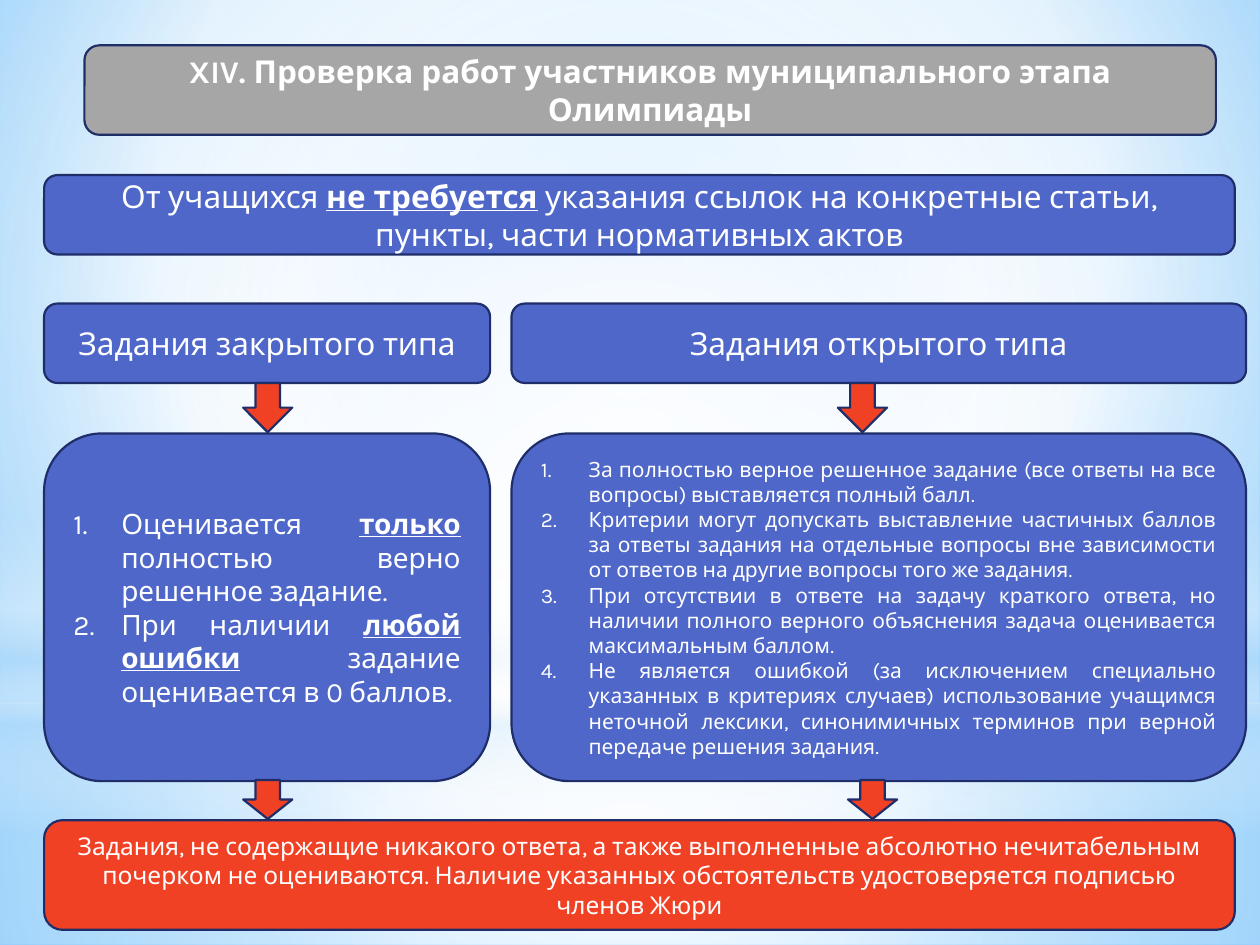
from lxml import etree
from pptx import Presentation
from pptx import util as u
from pptx.dml.color import RGBColor
from pptx.enum import shapes, text
from pptx.oxml import ns

BLUE, RED, GREY, NAVY, WHITE = "4E67C8", "F14124", "A6A6A6", "1F2E69", "FFFFFF"
SKY = "B4DCFA"
KIND = shapes.MSO_SHAPE
ALIGN = text.PP_ALIGN


def paint(fill, colour):
    fill.solid()
    fill.fore_color.rgb = RGBColor.from_string(colour)


def write(box, lines, size, bold=False, numbered=False):
    """Fill a box with lines; words between asterisks are bold and underlined."""
    frame = box.text_frame
    frame.word_wrap = True
    frame.vertical_anchor = text.MSO_ANCHOR.MIDDLE
    for index, line in enumerate(lines):
        para = frame.add_paragraph() if index else frame.paragraphs[0]
        para.alignment = ALIGN.JUSTIFY if numbered else ALIGN.CENTER
        if numbered:
            props = para._p.get_or_add_pPr()
            props.set("marL", str(u.Inches(0.38)))
            props.set("indent", str(-u.Inches(0.38)))
            etree.SubElement(props, ns.qn("a:buAutoNum"), type="arabicPeriod")
        for part, words in enumerate(line.split("*")):
            span = para.add_run()
            span.text = words
            span.font.name = "Karla"
            span.font.size = u.Pt(size)
            span.font.bold = bold or part % 2 == 1
            span.font.underline = part % 2 == 1
            paint(span.font.fill, WHITE)


deck = Presentation()
deck.slide_width, deck.slide_height = u.Inches(10), u.Inches(7.5)
page = deck.slides.add_slide(deck.slide_layouts[6])

# Backdrop: page gradient, then translucent layers.
# Stops are (position %, colour, opacity %); focus is left, top, right, bottom %.
CENTRE = (50, 50, 50, 50)
backdrop = [
    (None, None, (20, 10, 20, 60),
     [(0, "9ED5FF", 100), (60, WHITE, 100), (100, "5BB9FF", 100)]),
    (KIND.RECTANGLE, (0, 5.58, 10, 1.92), CENTRE,
     [(0, WHITE, 91), (37, WHITE, 76), (100, SKY, 79)]),
    (KIND.RECTANGLE, (0, 0, 10, 5.58), CENTRE,
     [(0, WHITE, 89), (48, WHITE, 62), (100, SKY, 79)]),
    (KIND.RECTANGLE, (0, 4.12, 10, 2.5), None,
     [(0, WHITE, 0), (29, WHITE, 30), (45, SKY, 40), (55, WHITE, 26),
      (65, SKY, 60), (100, WHITE, 0)]),
    (KIND.OVAL, (0, 1.75, 10, 5.58), CENTRE, [(0, WHITE, 100), (56, WHITE, 0)]),
]
for kind, place, focus, stops in backdrop:
    if kind is None:
        owner = page._element
        paint(page.background.fill, WHITE)
    else:
        layer = page.shapes.add_shape(kind, *map(u.Inches, place))
        layer.shadow.inherit = False
        layer.line.fill.background()
        paint(layer.fill, WHITE)
        owner = layer._element
    gradient = etree.Element(ns.qn("a:gradFill"), rotWithShape="1")
    stop_list = etree.SubElement(gradient, ns.qn("a:gsLst"))
    for position, colour, opacity in stops:
        stop = etree.SubElement(stop_list, ns.qn("a:gs"), pos=str(position * 1000))
        tint = etree.SubElement(stop, ns.qn("a:srgbClr"), val=colour)
        if opacity < 100:
            etree.SubElement(tint, ns.qn("a:alpha"), val=str(opacity * 1000))
    if focus:
        radial = etree.SubElement(gradient, ns.qn("a:path"), path="circle")
        sides = {side: str(share * 1000) for side, share in zip("ltrb", focus)}
        etree.SubElement(radial, ns.qn("a:fillToRect"), sides)
    else:
        etree.SubElement(gradient, ns.qn("a:lin"), ang="5400000", scaled="0")
    solid = owner.xpath(".//a:solidFill")[0]
    solid.getparent().replace(solid, gradient)

# Two columns, a full-width band and the rows they share
LEFT, RIGHT, WIDE = (0.35, 3.54), (4.06, 5.83), (0.35, 9.45)
HEADS, RULES = (2.41, 0.63), (3.44, 2.76)
UPPER, LOWER = (3.04, 0.39), (6.19, 0.31)

closed_rules = [
    "Оценивается *только* полностью верно решенное задание.",
    "При наличии *любой ошибки* задание оценивается в 0 баллов.",
]
open_rules = [
    "За полностью верное решенное задание (все ответы на все вопросы) "
    "выставляется полный балл.",
    "Критерии могут допускать выставление частичных баллов за ответы задания на "
    "отдельные вопросы вне зависимости от ответов на другие вопросы того же задания.",
    "При отсутствии в ответе на задачу краткого ответа, но наличии полного верного "
    "объяснения задача оценивается максимальным баллом.",
    "Не является ошибкой (за исключением специально указанных в критериях случаев) "
    "использование учащимся неточной лексики, синонимичных терминов при верной "
    "передаче решения задания.",
]
title = ["XIV. Проверка работ участников муниципального этапа Олимпиады"]
notice = ["От учащихся *не требуется* указания ссылок на конкретные статьи, "
          "пункты, части нормативных актов"]
closing = ["Задания, не содержащие никакого ответа, а также выполненные абсолютно "
           "нечитабельным почерком не оцениваются. Наличие указанных обстоятельств "
           "удостоверяется подписью членов Жюри"]

# Boxes and arrows, from back to front
ROUND, ARROW = KIND.ROUNDED_RECTANGLE, KIND.DOWN_ARROW
parts = [
    (ROUND, (0.67, 8.98), (0.36, 0.71), GREY, title, dict(size=18, bold=True)),
    (ROUND, LEFT, HEADS, BLUE, ["Задания закрытого типа"], dict(size=18)),
    (ROUND, RIGHT, HEADS, BLUE, ["Задания открытого типа"], dict(size=18)),
    (ROUND, WIDE, (1.39, 0.63), BLUE, notice, dict(size=18)),
    (ROUND, RIGHT, RULES, BLUE, open_rules, dict(size=12, numbered=True)),
    (ROUND, LEFT, RULES, BLUE, closed_rules, dict(size=16, numbered=True)),
    (ARROW, (1.93, 0.39), UPPER, RED, None, None),
    (ARROW, (6.65, 0.39), UPPER, RED, None, None),
    (ROUND, WIDE, (6.51, 0.87), RED, closing, dict(size=14)),
    (ARROW, (1.93, 0.39), LOWER, RED, None, None),
    (ARROW, (6.73, 0.39), LOWER, RED, None, None),
]
for kind, (left, width), (top, height), colour, lines, style in parts:
    box = page.shapes.add_shape(kind, *map(u.Inches, (left, top, width, height)))
    box.shadow.inherit = False
    paint(box.fill, colour)
    paint(box.line.fill, NAVY)
    box.line.width = u.Pt(1.25)
    if lines:
        write(box, lines, **style)

deck.save("out.pptx")
